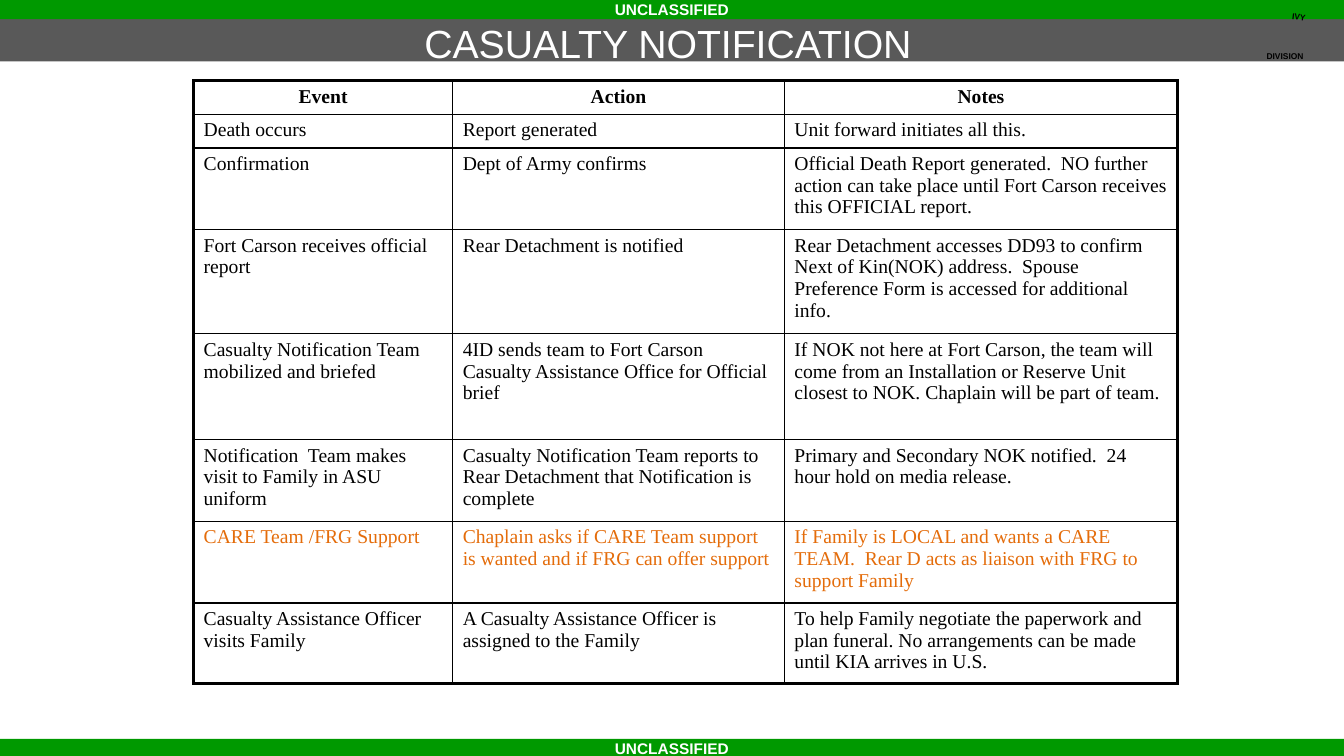
from lxml.etree import SubElement
from pptx import Presentation
from pptx.dml.color import RGBColor
from pptx.enum.shapes import MSO_SHAPE
from pptx.enum.text import MSO_ANCHOR, PP_ALIGN
from pptx.oxml.ns import qn
from pptx.util import Inches, Pt

COLORS = {
    "black": "000000",
    "white": "FFFFFF",
    "gray": "595959",
    "green": "009900",
    "orange": "E46C0A",
}
SANS, SERIF = "Arial", "Times New Roman"
OUTER_LINE, INNER_LINE = 2.25, 1

COLUMN_WIDTHS = [2.57, 3.29, 3.9]
ROW_HEIGHTS = [0.33, 0.33, 0.81, 0.81, 1.05, 0.81, 0.81, 0.77]
SUPPORT_ROW = 6
EVENTS = [
    ("Event", "Action", "Notes"),
    ("Death occurs", "Report generated", "Unit forward initiates all this."),
    ("Confirmation", "Dept of Army confirms",
     "Official Death Report generated.  NO further action can take place until "
     "Fort Carson receives this OFFICIAL report."),
    ("Fort Carson receives official report", "Rear Detachment is notified",
     "Rear Detachment accesses DD93 to confirm Next of Kin(NOK) address.  Spouse "
     "Preference Form is accessed for additional info."),
    ("Casualty Notification Team mobilized and briefed",
     "4ID sends team to Fort Carson Casualty Assistance Office for Official brief",
     "If NOK not here at Fort Carson, the team will come from an Installation or "
     "Reserve Unit closest to NOK. Chaplain will be part of team."),
    ("Notification  Team makes visit to Family in ASU uniform",
     "Casualty Notification Team reports to Rear Detachment that Notification is complete",
     "Primary and Secondary NOK notified.  24 hour hold on media release."),
    ("CARE Team /FRG Support",
     "Chaplain asks if CARE Team support is wanted and if FRG can offer support",
     "If Family is LOCAL and wants a CARE TEAM.  Rear D acts as liaison with FRG "
     "to support Family"),
    ("Casualty Assistance Officer visits Family",
     "A Casualty Assistance Officer is assigned to the Family",
     "To help Family negotiate the paperwork and plan funeral. No arrangements can "
     "be made until KIA arrives in U.S."),
]


class SlideBuilder:
    def __init__(self, slide):
        self.slide = slide

    def set_text(self, frame, text, size, color, font=SANS, bold=False, align=PP_ALIGN.CENTER):
        frame.word_wrap = True
        paragraph = frame.paragraphs[0]
        paragraph.text = text
        paragraph.alignment = align
        paragraph.font.name = font
        paragraph.font.size = Pt(size)
        paragraph.font.bold = bold
        paragraph.font.color.rgb = RGBColor.from_string(COLORS[color])

    def band(self, left, top, width, height, color, text=None):
        shape = self.slide.shapes.add_shape(
            MSO_SHAPE.RECTANGLE, Inches(left), Inches(top), Inches(width), Inches(height))
        shape.shadow.inherit = False
        shape.fill.solid()
        shape.fill.fore_color.rgb = RGBColor.from_string(COLORS[color])
        shape.line.fill.background()
        if text:
            shape.text_frame.vertical_anchor = MSO_ANCHOR.MIDDLE
            self.set_text(shape.text_frame, text, 11, "white", bold=True)

    def text(self, left, top, width, height, text, size, color, bold=False,
             anchor=MSO_ANCHOR.TOP, rotation=0):
        box = self.slide.shapes.add_textbox(
            Inches(left), Inches(top), Inches(width), Inches(height))
        box.rotation = rotation
        box.text_frame.vertical_anchor = anchor
        self.set_text(box.text_frame, text, size, color, bold=bold)

    def border(self, cell, side, width):
        properties = cell._tc.get_or_add_tcPr()
        line = SubElement(properties, qn(f"a:ln{side}"), w=str(Pt(width)))
        fill = SubElement(line, qn("a:solidFill"))
        SubElement(fill, qn("a:srgbClr"), val=COLORS["black"])

    def table(self, left, top, rows, widths, heights):
        table = self.slide.shapes.add_table(
            len(rows), len(widths), Inches(left), Inches(top),
            Inches(sum(widths)), Inches(sum(heights))).table
        table.first_row = table.horz_banding = False
        for column, width in zip(table.columns, widths):
            column.width = Inches(width)
        for row, height in zip(table.rows, heights):
            row.height = Inches(height)

        last_row, last_column = len(rows) - 1, len(widths) - 1
        for i, row in enumerate(rows):
            for j, text in enumerate(row):
                cell = table.cell(i, j)
                header = i == 0
                self.set_text(cell.text_frame, text, 14,
                              "orange" if i == SUPPORT_ROW else "black", SERIF, header,
                              PP_ALIGN.CENTER if header else PP_ALIGN.LEFT)
                edges = {"L": j == 0, "R": j == last_column, "T": header, "B": i == last_row}
                for side, outer in edges.items():
                    self.border(cell, side, OUTER_LINE if outer else INNER_LINE)
                cell.fill.background()


def main():
    presentation = Presentation()
    presentation.slide_width = Inches(13.33)
    presentation.slide_height = Inches(7.5)
    builder = SlideBuilder(presentation.slides.add_slide(presentation.slide_layouts[6]))

    # Title bar and classification bands
    builder.band(-0.01, 0.02, 13.34, 0.59, "gray")
    for top in (0, 7.33):
        builder.band(0, top, 13.33, 0.19, "green", "UNCLASSIFIED")

    # Division label
    builder.text(12.4, 0.46, 0.69, 0.17, "DIVISION", 6, "black", bold=True)
    builder.text(12.43, 0.07, 0.91, 0.17, "IVY", 6, "black", bold=True, rotation=6.9)

    # Notification steps
    builder.table(1.92, 0.8, EVENTS, COLUMN_WIDTHS, ROW_HEIGHTS)

    # Title
    builder.text(1.57, 0.23, 10.11, 0.39, "CASUALTY NOTIFICATION", 28, "white",
                 anchor=MSO_ANCHOR.MIDDLE)

    presentation.save("out.pptx")


if __name__ == "__main__":
    main()
